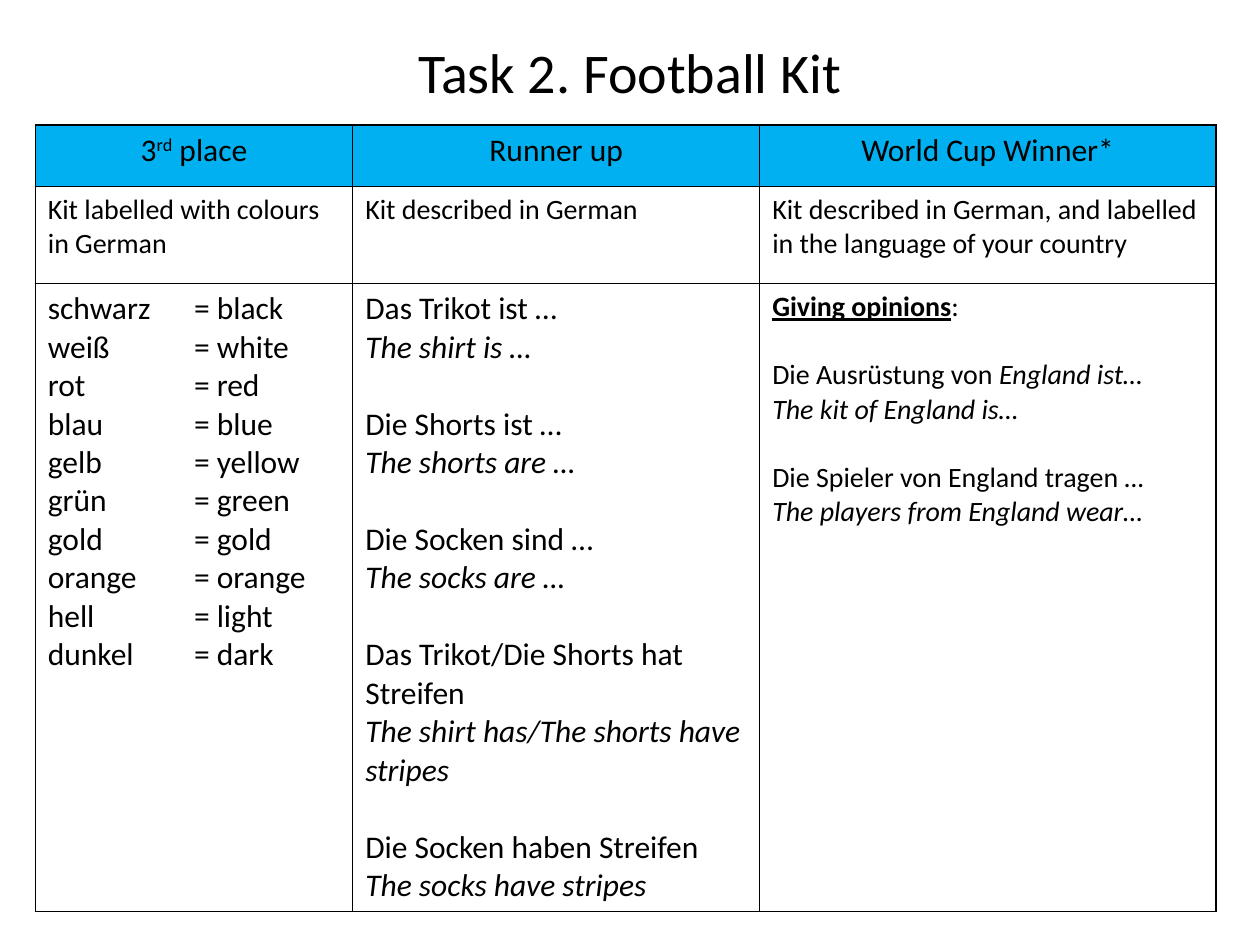
from lxml.etree import SubElement
from pptx import Presentation
from pptx.dml.color import RGBColor
from pptx.enum.text import MSO_ANCHOR, PP_ALIGN
from pptx.oxml.ns import qn
from pptx.util import Inches, Pt

BLACK = RGBColor(0x00, 0x00, 0x00)
SKY = RGBColor(0x00, 0xB0, 0xF0)

TITLE_ONLY = 5
COLS = (2.52, 3.23, 3.62)
ROWS = (0.49, 0.77, 4.98)
LINE_HEIGHT = 1.22
TAB_STOP = 1.16

# A cell is a list of groups, a group a list of paragraphs,
# a paragraph a list of (text, style) runs.
PLAIN, ITALIC, HEADING, SUPER = "", "i", "bu", "^"

COLOURS = [
    ("schwarz", "black"), ("weiß", "white"), ("rot", "red"),
    ("blau", "blue"), ("gelb", "yellow"), ("grün", "green"),
    ("gold", "gold"), ("orange", "orange"), ("hell", "light"),
    ("dunkel", "dark"),
]
KIT_PHRASES = [
    ("Das Trikot ist …", "The shirt is …"),
    ("Die Shorts ist …", "The shorts are …"),
    ("Die Socken sind …", "The socks are …"),
    ("Das Trikot/Die Shorts hat Streifen",
     "The shirt has/The shorts have stripes"),
    ("Die Socken haben Streifen", "The socks have stripes"),
]
OPINIONS = [
    [[("Giving opinions", HEADING), (":", PLAIN)]],
    [[("Die Ausrüstung von ", PLAIN), ("England ist…", ITALIC)],
     [("The kit of England is…", ITALIC)]],
    [[("Die Spieler von England tragen", PLAIN), (" …", ITALIC)],
     [("The players from England wear…", ITALIC)]],
]


def line(text, style=PLAIN):
    return [(text, style)]


def single(text):
    """Cell content made of one plain paragraph."""
    return [[line(text)]]


class KitSlide:
    font = "Calibri"

    def __init__(self, prs):
        self.prs = prs
        self.s = prs.slides.add_slide(prs.slide_layouts[TITLE_ONLY])

    def style(self, p, size, align):
        p.alignment = align
        p.font.name = self.font
        p.font.size = Pt(size)
        p.font.color.rgb = BLACK

    def title(self, text, left, top, width, height):
        """Place the title; lengths are shares of the slide's size."""
        sp = self.s.shapes.title
        sp.left = int(self.prs.slide_width * left)
        sp.top = int(self.prs.slide_height * top)
        sp.width = int(self.prs.slide_width * width)
        sp.height = int(self.prs.slide_height * height)
        tf = sp.text_frame
        tf.text = text
        tf.vertical_anchor = MSO_ANCHOR.MIDDLE
        self.style(tf.paragraphs[0], 32, PP_ALIGN.CENTER)

    def table(self, left, top, cols, rows):
        frame = self.s.shapes.add_table(
            len(rows), len(cols), Inches(left), Inches(top),
            Inches(sum(cols)), Inches(sum(rows)))
        table = frame.table
        table.first_row = table.horz_banding = False
        for column, width in zip(table.columns, cols):
            column.width = Inches(width)
        for row, height in zip(table.rows, rows):
            row.height = Inches(height)
        return table

    def cell(self, cell, groups, size, align=PP_ALIGN.LEFT, fill=None):
        self.borders(cell)
        if fill is None:
            cell.fill.background()
        else:
            cell.fill.solid()
            cell.fill.fore_color.rgb = fill
        tf = cell.text_frame
        p = tf.paragraphs[0]
        for g, group in enumerate(groups):
            for n, runs in enumerate(group):
                if g or n:
                    p = tf.add_paragraph()
                self.style(p, size, align)
                if g and n == 0:
                    p.space_before = Pt(round(size * LINE_HEIGHT, 1))
                for text, style in runs:
                    self.run(p, text, style)

    def run(self, p, text, style):
        if "\t" in text:
            tabs = SubElement(p._p.get_or_add_pPr(), qn("a:tabLst"))
            SubElement(tabs, qn("a:tab"), pos=str(Inches(TAB_STOP)), algn="l")
            # Tab stops come before the default run properties.
            default = p._p.pPr.find(qn("a:defRPr"))
            if default is not None:
                default.addprevious(tabs)
        r = p.add_run()
        r.text = text
        if "i" in style:
            r.font.italic = True
        if "b" in style:
            r.font.bold = True
        if "u" in style:
            r.font.underline = True
        if SUPER in style:
            r._r.get_or_add_rPr().set("baseline", "30000")

    def borders(self, cell):
        tcPr = cell._tc.get_or_add_tcPr()
        for side in ("L", "R", "T", "B"):
            ln = SubElement(tcPr, qn(f"a:ln{side}"), w=str(Pt(1)))
            fill = SubElement(ln, qn("a:solidFill"))
            SubElement(fill, qn("a:srgbClr"), val=str(BLACK))


def main():
    prs = Presentation()
    prs.slide_width, prs.slide_height = Inches(10), Inches(7.5)
    slide = KitSlide(prs)
    slide.title("Task 2. Football Kit", 0.05, 0.04, 0.9, 0.07)
    table = slide.table(0.28, 0.99, COLS, ROWS)

    headers = [
        [[[("3", PLAIN), ("rd", SUPER), (" place", PLAIN)]]],
        single("Runner up"),
        single("World Cup Winner*"),
    ]
    tasks = [
        single("Kit labelled with colours in German"),
        single("Kit described in German"),
        single("Kit described in German, and labelled "
               "in the language of your country"),
    ]
    help_texts = [
        [[line(f"{german}\t= {english}") for german, english in COLOURS]],
        [[line(german), line(english, ITALIC)]
         for german, english in KIT_PHRASES],
        OPINIONS,
    ]
    for c, groups in enumerate(headers):
        slide.cell(table.cell(0, c), groups, 18, PP_ALIGN.CENTER, SKY)
    for c, groups in enumerate(tasks):
        slide.cell(table.cell(1, c), groups, 16)
    for c, (groups, size) in enumerate(zip(help_texts, (18, 18, 16))):
        slide.cell(table.cell(2, c), groups, size)

    prs.save("out.pptx")


if __name__ == "__main__":
    main()
